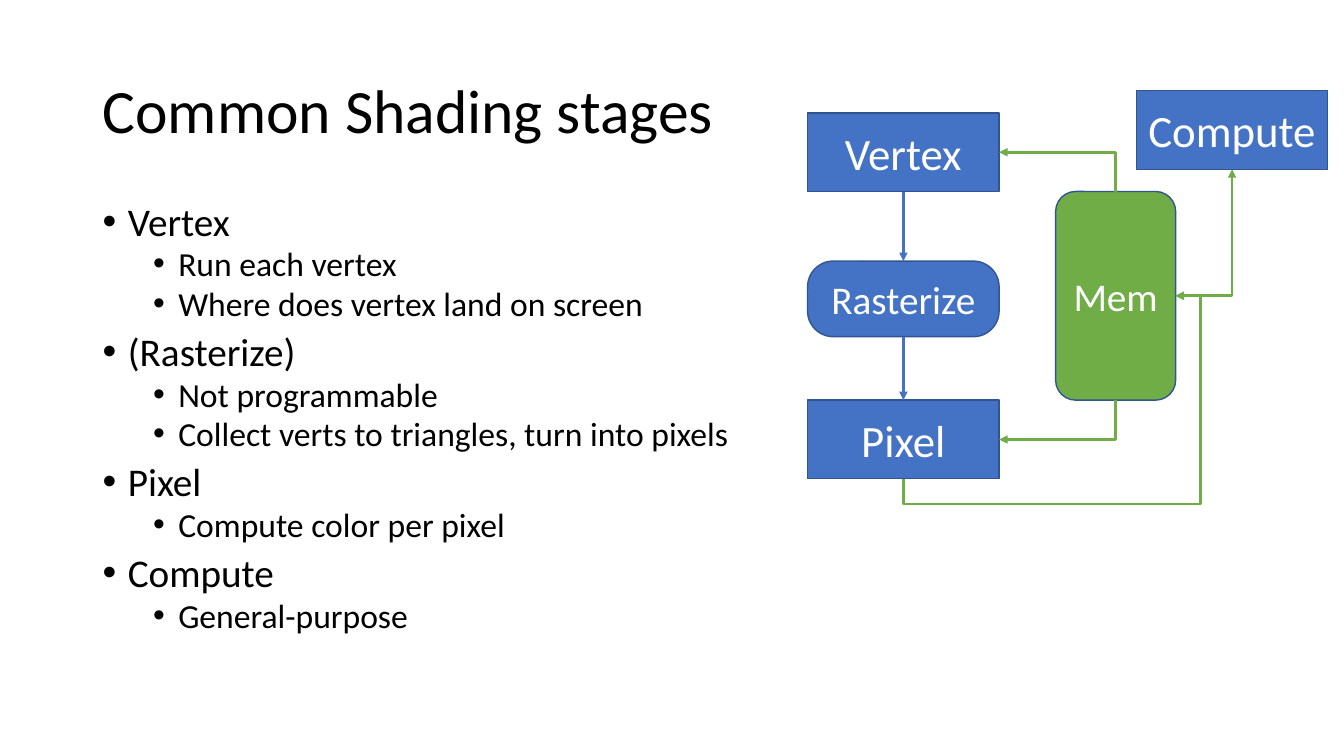
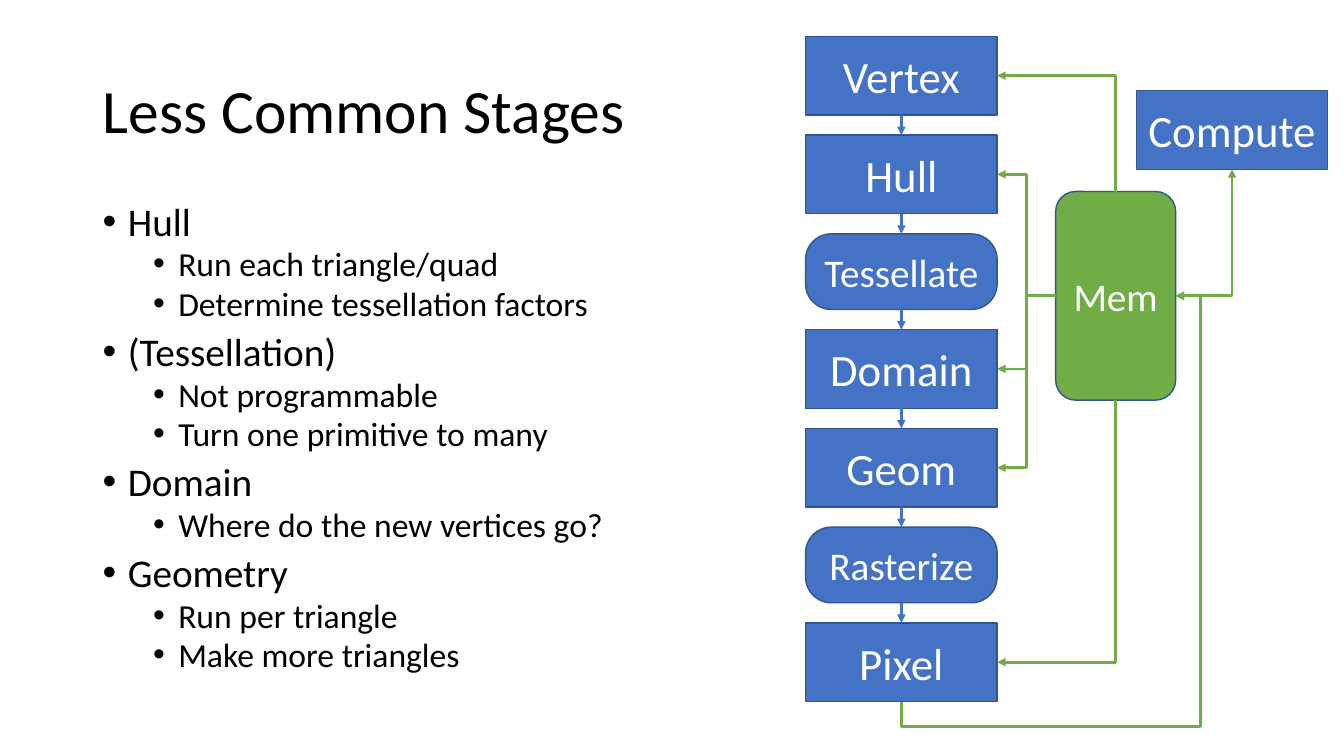
from lxml import etree
from pptx import Presentation
from pptx import util as u
from pptx.dml.color import RGBColor
from pptx.enum import shapes, text
from pptx.oxml.ns import qn

PX = 9144  # EMU in one px, 100 px to the inch

BLACK = RGBColor(0x00, 0x00, 0x00)
WHITE = RGBColor(0xFF, 0xFF, 0xFF)
BLUE = RGBColor(0x44, 0x72, 0xC4)
GREEN = RGBColor(0x70, 0xAD, 0x47)
EDGE = RGBColor(0x32, 0x54, 0x91)

FONT = "Calibri"
RECT = shapes.MSO_SHAPE.RECTANGLE
ROUND = shapes.MSO_SHAPE.ROUNDED_RECTANGLE
TOP, LEFT, BOTTOM, RIGHT = range(4)  # connection sites of a box

# One entry per outline level
LEVELS = [
    {"size": 28, "before": 10, "margin": 25},
    {"size": 24, "before": 5, "margin": 75},
]
INDENT = -25

STAGE_WIDTH = 190
STAGE_HEIGHT, FIXED_HEIGHT = 78, 75
FIXED_STAGES = {"Rasterize", "Tessellate"}
DETOUR = 25  # how far the pixel-to-memory route swings out

DECK = [
    {
        "title": "Common Shading stages",
        "outline": [
            ("Vertex", ["Run each vertex", "Where does vertex land on screen"]),
            ("(Rasterize)", ["Not programmable",
                             "Collect verts to triangles, turn into pixels"]),
            ("Pixel", ["Compute color per pixel"]),
            ("Compute", ["General-purpose"]),
        ],
        "stages": ["Vertex", "Rasterize", "Pixel"],
        "corner": (801, 112),
        "gaps": [69, 63],
    },
    {
        "title": "Less Common Stages",
        "outline": [
            ("Hull", ["Run each triangle/quad", "Determine tessellation factors"]),
            ("(Tessellation)", ["Not programmable", "Turn one primitive to many"]),
            ("Domain", ["Where do the new vertices go?"]),
            ("Geometry", ["Run per triangle", "Make more triangles"]),
        ],
        "stages": ["Vertex", "Hull", "Tessellate", "Domain", "Geom",
                   "Rasterize", "Pixel"],
        "corner": (799, 36),
        "gaps": [20] * 6,
    },
]


def set_all(target, values):
    for name, value in values.items():
        setattr(target, name, value)


def add_span(para, words, size, color):
    span = para.add_run()
    span.text = words
    set_all(span.font, {"name": FONT, "size": u.Pt(size)})
    span.font.color.rgb = color


# Text
def add_text_frame(page, left, top, width, height, anchor):
    box = page.shapes.add_textbox(left * PX, top * PX, width * PX, height * PX)
    set_all(box.text_frame, {"word_wrap": True, "vertical_anchor": anchor})
    return box.text_frame


def add_title(page, words):
    frame = add_text_frame(page, 92, 40, 1150, 145, text.MSO_ANCHOR.MIDDLE)
    para = frame.paragraphs[0]
    para.line_spacing = 0.9
    add_span(para, words, 44, BLACK)


def add_bullet(para, words, level):
    style = LEVELS[level]
    set_all(para, {"level": level, "line_spacing": 0.8,
                   "space_before": u.Pt(style["before"])})
    props = para._p.get_or_add_pPr()
    props.set("marL", str(style["margin"] * PX))
    props.set("indent", str(INDENT * PX))
    etree.SubElement(props, qn("a:buFont")).set("typeface", "Arial")
    etree.SubElement(props, qn("a:buChar")).set("char", "•")
    add_span(para, words, style["size"], BLACK)


def add_outline(page, outline):
    frame = add_text_frame(page, 92, 200, 1150, 476, text.MSO_ANCHOR.TOP)
    lines = []
    for heading, details in outline:
        lines += [(heading, 0)] + [(detail, 1) for detail in details]
    for index, (words, level) in enumerate(lines):
        para = frame.add_paragraph() if index else frame.paragraphs[0]
        add_bullet(para, words, level)


# Diagram parts
def add_box(page, words, left, top, width, height,
            kind=RECT, fill=BLUE, size=32, rounding=None):
    box = page.shapes.add_shape(kind, left * PX, top * PX, width * PX, height * PX)
    box.shadow.inherit = False
    box.fill.solid()
    box.fill.fore_color.rgb = fill
    box.line.color.rgb = EDGE
    box.line.width = u.Pt(1)
    if rounding is not None:
        box.adjustments[0] = rounding
    box.text_frame.vertical_anchor = text.MSO_ANCHOR.MIDDLE
    para = box.text_frame.paragraphs[0]
    para.alignment = text.PP_ALIGN.CENTER
    add_span(para, words, size, WHITE)
    return box


def add_stage(page, name, left, top):
    if name in FIXED_STAGES:
        return add_box(page, name, left, top, STAGE_WIDTH, FIXED_HEIGHT,
                       kind=ROUND, size=28, rounding=0.34)
    return add_box(page, name, left, top, STAGE_WIDTH, STAGE_HEIGHT)


def add_arrow(page, start, end, color, ends=("tailEnd",), bend=None, adjust=()):
    """Join two (box, site) pairs; bend names a preset elbow outline."""
    kind = shapes.MSO_CONNECTOR.ELBOW if bend else shapes.MSO_CONNECTOR.STRAIGHT
    arrow = page.shapes.add_connector(kind, 0, 0, 0, 0)
    arrow.begin_connect(*start)
    arrow.end_connect(*end)
    arrow.line.color.rgb = color
    arrow.line.width = u.Pt(2)
    props = arrow.element.spPr
    for name in ends:
        tip = etree.SubElement(props.find(qn("a:ln")), qn(f"a:{name}"))
        tip.set("type", "triangle")
    etree.SubElement(props, qn("a:effectLst"))
    if bend:
        outline = props.find(qn("a:prstGeom"))
        outline.set("prst", bend)
        values = outline.find(qn("a:avLst"))
        for number, share in enumerate(adjust, 1):
            guide = etree.SubElement(values, qn("a:gd"))
            guide.set("name", f"adj{number}")
            guide.set("fmla", f"val {round(share * 100000)}")


def add_detour(page, memory, pixel):
    """Route from below the pixel stage around to the right of memory."""
    swing = DETOUR * PX
    across = pixel.left + pixel.width // 2 - memory.left - memory.width
    down = pixel.top + pixel.height - memory.top - memory.height // 2
    add_arrow(page, (memory, RIGHT), (pixel, BOTTOM), GREEN, ("headEnd",),
              "bentConnector4", (swing / across, 1 + swing / down))


def add_pipeline(page, names, corner, gaps):
    left, top = corner
    stages = []
    for name, gap in zip(names, gaps + [0]):
        stages.append(add_stage(page, name, left, top))
        top += (FIXED_HEIGHT if name in FIXED_STAGES else STAGE_HEIGHT) + gap
    for upper, lower in zip(stages, stages[1:]):
        add_arrow(page, (upper, BOTTOM), (lower, TOP), BLUE)

    memory = add_box(page, "Mem", 1047, 190, 119, 207, ROUND, GREEN, 28)
    compute = add_box(page, "Compute", 1127, 90, STAGE_WIDTH, STAGE_HEIGHT)

    # Memory feeds every programmable stage
    vertex, pixel = stages[0], stages[-1]
    for stage, site in ((vertex, TOP), (pixel, BOTTOM)):
        add_arrow(page, (stage, RIGHT), (memory, site), GREEN, ("headEnd",),
                  "bentConnector2")
    for name, stage in zip(names[1:-1], stages[1:-1]):
        if name not in FIXED_STAGES:
            add_arrow(page, (memory, LEFT), (stage, RIGHT), GREEN,
                      bend="bentConnector3", adjust=(0.5,))
    add_detour(page, memory, pixel)
    add_arrow(page, (memory, RIGHT), (compute, BOTTOM), GREEN,
              ("headEnd", "tailEnd"), "bentConnector2")


def main():
    deck = Presentation()
    set_all(deck, {"slide_width": 1333 * PX, "slide_height": 750 * PX})
    for content in DECK:
        page = deck.slides.add_slide(deck.slide_layouts[6])
        add_title(page, content["title"])
        add_outline(page, content["outline"])
        add_pipeline(page, content["stages"], content["corner"], content["gaps"])
    deck.save("out.pptx")


if __name__ == "__main__":
    main()
